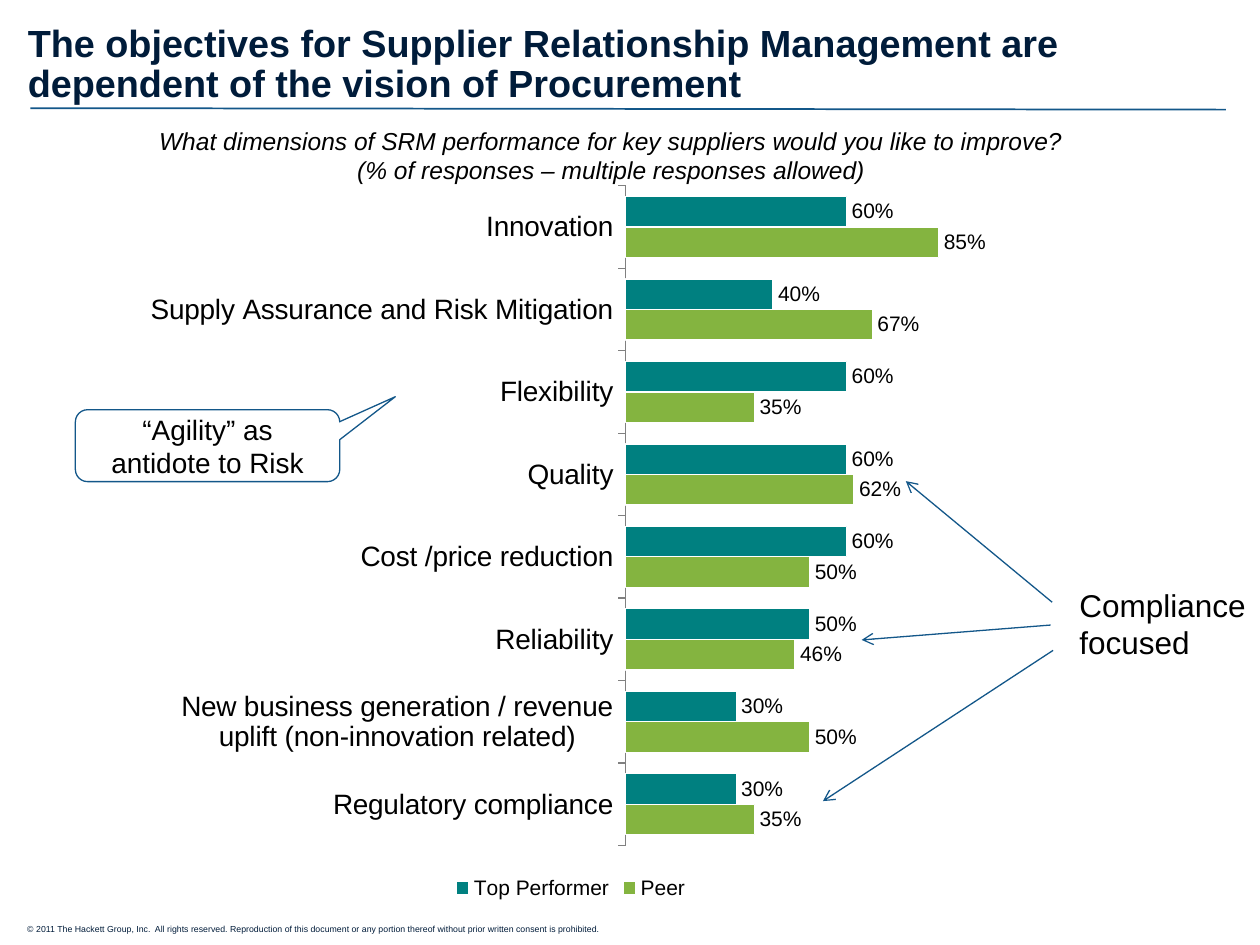
from dataclasses import dataclass

from lxml.etree import SubElement
from pptx import Presentation
from pptx.chart.data import CategoryChartData
from pptx.dml.color import RGBColor
from pptx.enum.chart import XL_CHART_TYPE, XL_LABEL_POSITION, XL_LEGEND_POSITION, XL_TICK_MARK
from pptx.enum.shapes import MSO_CONNECTOR, MSO_SHAPE
from pptx.enum.text import MSO_ANCHOR, PP_ALIGN
from pptx.oxml.ns import qn
from pptx.util import Cm, Pt

COLORS = {"navy": "001C3A", "line": "135789", "peer": "84B440", "top": "008080",
          "black": "000000", "white": "FFFFFF", "axis": "808080"}
FONT = "Arial"


@dataclass
class Line:
    x1: float
    y1: float
    x2: float
    y2: float
    width: float = 0.75
    arrow: bool = True


@dataclass
class Series:
    name: str
    color: str
    values: tuple


RULE = Line(0.61, 2.18, 24.71, 2.21, width=1, arrow=False)
ARROWS = [
    Line(21.21, 12.14, 18.26, 9.7),
    Line(21.18, 12.6, 17.37, 12.9),
    Line(21.23, 13.11, 16.59, 16.15),
]
CATEGORIES = [
    "Regulatory compliance",
    "New business generation / revenue uplift (non-innovation related)",
    "Reliability", "Cost /price reduction", "Quality", "Flexibility",
    "Supply Assurance and Risk Mitigation", "Innovation",
]
SERIES = [
    Series("Peer", "peer", (0.35, 0.5, 0.46, 0.5, 0.62, 0.35, 0.67, 0.85)),
    Series("Top Performer", "top", (0.3, 0.3, 0.5, 0.6, 0.6, 0.6, 0.4, 0.6)),
]
# Inner plot area as fractions of the chart
PLOT = {"x": 0.576, "y": 0.02, "w": 0.435, "h": 0.9}


def rgb(name: str) -> RGBColor:
    return RGBColor.from_string(COLORS[name])


def cm_box(*lengths: float) -> list:
    return [Cm(v) for v in lengths]


def set_font(font, size: float, color: str = "black", bold: bool = False,
             italic: bool = False) -> None:
    font.name, font.size = FONT, Pt(size)
    font.bold, font.italic = bold, italic
    font.color.rgb = rgb(color)


def write(sp, *lines: str, size: float, color: str = "black", bold: bool = False,
          italic: bool = False, align=PP_ALIGN.LEFT, anchor=MSO_ANCHOR.TOP,
          spacing=None) -> None:
    tf = sp.text_frame
    tf.word_wrap = True
    tf.vertical_anchor = anchor
    for i, text in enumerate(lines):
        p = tf.add_paragraph() if i else tf.paragraphs[0]
        p.alignment = align
        if spacing:
            p.line_spacing = spacing
        r = p.add_run()
        r.text = text
        set_font(r.font, size, color, bold, italic)


def add_line(s, line: Line) -> None:
    c = s.shapes.add_connector(MSO_CONNECTOR.STRAIGHT,
                               *cm_box(line.x1, line.y1, line.x2, line.y2))
    c.line.color.rgb = rgb("line")
    c.line.width = Pt(line.width)
    if line.arrow:
        SubElement(c.line._get_or_add_ln(), qn("a:tailEnd"), type="arrow")
    SubElement(c._element.spPr, qn("a:effectLst"))


def add_bar_chart(s) -> None:
    data = CategoryChartData(number_format="0%")
    data.categories = CATEGORIES
    for item in SERIES:
        data.add_series(item.name, item.values)
    chart = s.shapes.add_chart(XL_CHART_TYPE.BAR_CLUSTERED,
                               *cm_box(2.97, 3.45, 17.07, 14.78), data).chart
    set_font(chart.font, 18)
    chart.has_title = False
    chart.has_legend = True
    chart.legend.position = XL_LEGEND_POSITION.BOTTOM
    chart.legend.include_in_layout = False
    set_font(chart.legend.font, 12)

    # Axes
    cat = chart.category_axis
    set_font(cat.tick_labels.font, 16)
    cat.major_tick_mark = XL_TICK_MARK.OUTSIDE
    cat.format.line.color.rgb = rgb("axis")
    cat.format.line.width = Pt(0.75)
    val = chart.value_axis
    val.has_major_gridlines = False
    val.minimum_scale, val.maximum_scale = 0, 1
    val.visible = False

    # Bars and their labels
    plot = chart.plots[0]
    plot.gap_width, plot.overlap = 70, 0
    plot.vary_by_categories = False
    for ser, item in zip(plot.series, SERIES):
        ser.format.fill.solid()
        ser.format.fill.fore_color.rgb = rgb(item.color)
        ser.format.line.color.rgb = rgb("white")
        ser.format.line.width = Pt(0.75)
        labels = ser.data_labels
        labels.show_value = True
        labels.position = XL_LABEL_POSITION.OUTSIDE_END
        labels.number_format, labels.number_format_is_linked = "0%", False
        set_font(labels.font, 12)

    # Fixed plot area
    area = chart._chartSpace.chart.plotArea
    layout = area.find(qn("c:layout"))
    if layout is None:
        layout = SubElement(area, qn("c:layout"))
        area.insert(0, layout)
    manual = SubElement(layout, qn("c:manualLayout"))
    SubElement(manual, qn("c:layoutTarget"), val="inner")
    for side in "xy":
        SubElement(manual, qn(f"c:{side}Mode"), val="edge")
    for key, value in PLOT.items():
        SubElement(manual, qn(f"c:{key}"), val=str(value))


def main() -> None:
    prs = Presentation()
    prs.slide_width, prs.slide_height = Cm(25.4), Cm(19.05)
    s = prs.slides.add_slide(prs.slide_layouts[5])

    # Footer and title
    write(s.shapes.add_textbox(*cm_box(0.3, 18.49, 15.6, 0.46)),
          "© 2011 The Hackett Group, Inc.  All rights reserved. Reproduction of this "
          "document or any portion thereof without prior written consent is prohibited.",
          size=5, color="navy")
    add_line(s, RULE)
    title = s.shapes.title
    title.left, title.top, title.width, title.height = cm_box(0.36, 0.79, 24.61, 1.45)
    tf = title.text_frame
    tf.margin_left = tf.margin_right = Cm(0.2)
    tf.margin_top = tf.margin_bottom = Cm(0.1)
    write(title, "The objectives for Supplier Relationship Management are dependent "
          "of the vision of Procurement", size=21.6, color="navy", bold=True,
          anchor=MSO_ANCHOR.BOTTOM, spacing=0.9)

    # Chart with its question
    add_bar_chart(s)
    write(s.shapes.add_textbox(*cm_box(1.45, 2.41, 21.74, 1.45)),
          "What dimensions of SRM performance for key suppliers would you like to improve?",
          "(% of responses – multiple responses allowed)",
          size=14, italic=True, align=PP_ALIGN.CENTER)

    # Callout
    callout = s.shapes.add_shape(MSO_SHAPE.ROUNDED_RECTANGULAR_CALLOUT,
                                 *cm_box(1.52, 8.26, 5.33, 1.45))
    for i, value in enumerate((0.71, -0.68, 0.17)):
        callout.adjustments[i] = value
    callout.shadow.inherit = False
    callout.fill.solid()
    callout.fill.fore_color.rgb = rgb("white")
    callout.line.color.rgb = rgb("line")
    callout.line.width = Pt(0.75)
    write(callout, "“Agility” as antidote to Risk", size=16,
          align=PP_ALIGN.CENTER, anchor=MSO_ANCHOR.MIDDLE)

    # Compliance note with arrows to its bars
    for arrow in ARROWS:
        add_line(s, arrow)
    note = s.shapes.add_textbox(*cm_box(21.51, 11.68, 3.89, 1.8))
    note.text_frame.margin_right = 0
    write(note, "Compliance focused", size=18)

    prs.save("out.pptx")


if __name__ == "__main__":
    main()
